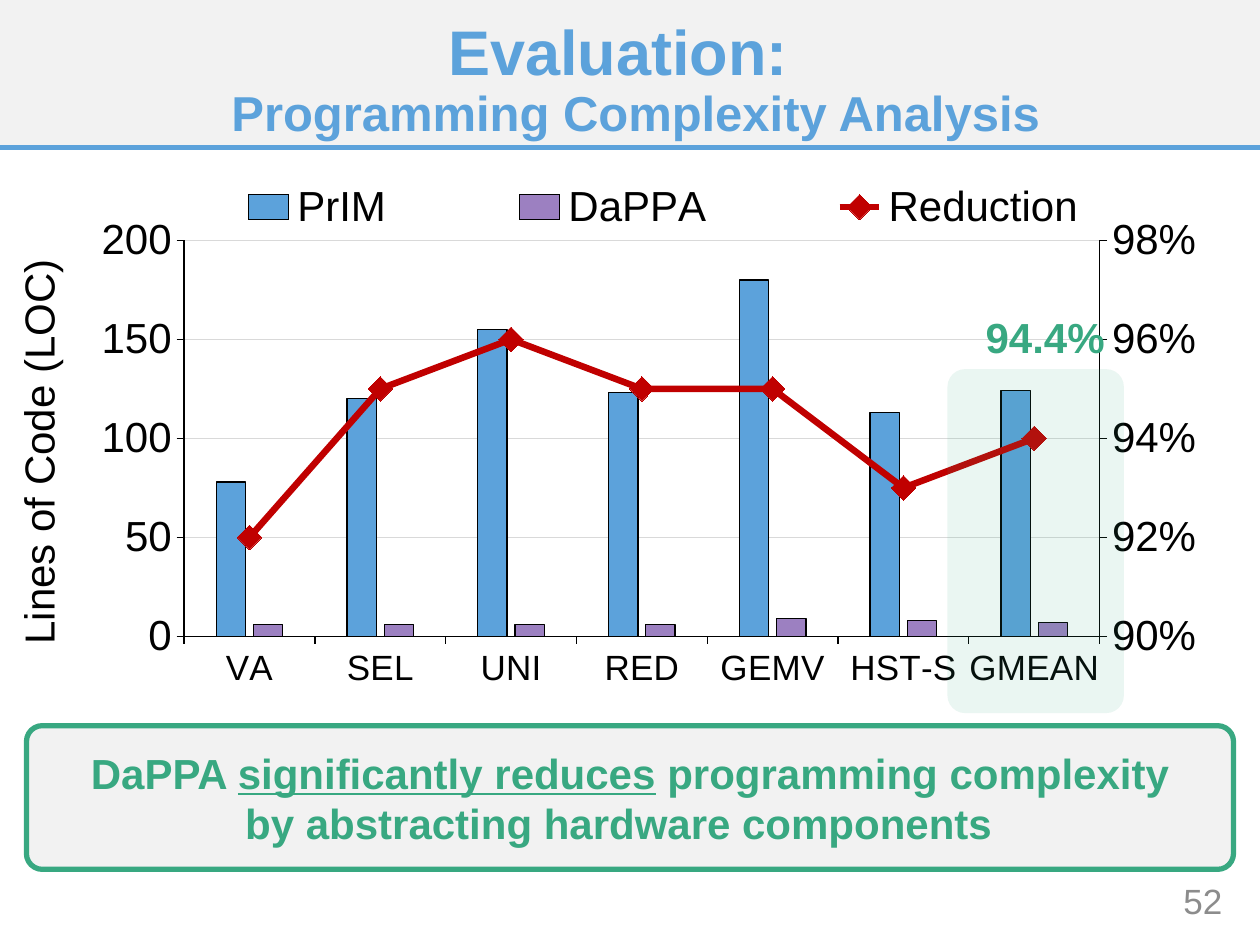
from lxml import etree
from pptx import Presentation
from pptx.chart.data import CategoryChartData
from pptx.dml.color import RGBColor
from pptx.enum.chart import XL_CHART_TYPE, XL_LEGEND_POSITION, XL_MARKER_STYLE, XL_TICK_MARK
from pptx.enum.shapes import MSO_CONNECTOR, MSO_SHAPE
from pptx.enum.text import MSO_ANCHOR, MSO_AUTO_SIZE, PP_ALIGN
from pptx.oxml import parse_xml
from pptx.oxml.ns import nsdecls, qn
from pptx.util import Inches, Pt

CENTER, RIGHT = PP_ALIGN.CENTER, PP_ALIGN.RIGHT
TOP, MIDDLE = MSO_ANCHOR.TOP, MSO_ANCHOR.MIDDLE
OUTSIDE, NO_TICK = XL_TICK_MARK.OUTSIDE, XL_TICK_MARK.NONE
FONT = "Arial"
BLUE, GREEN, PURPLE, RED = "5CA2DB", "38A881", "9C80C1", "C00000"
PALE, GRID, GRAY, BLACK = "F2F2F2", "D9D9D9", "8C8C8C", "000000"

# Content: each line is (runs, size, right indent); each run is (text, underlined)
TITLE = [([("Evaluation:", False)], 36, 0.28),
         ([("Programming Complexity Analysis", False)], 28, 0)]
TAKEAWAY = [([("DaPPA ", False), ("significantly reduces", True),
              (" programming complexity", False)], 24, 0),
            ([("by abstracting hardware components", False)], 24, 0.18)]
CATEGORIES = ["VA", "SEL", "UNI", "RED", "GEMV", "HST-S", "GMEAN"]
BARS = [("PrIM", [78, 120, 155, 123, 180, 113, 124], BLUE),
        ("DaPPA", [6, 6, 6, 6, 9, 8, 7], PURPLE)]
REDUCTION = ("Reduction", [0.92, 0.95, 0.96, 0.95, 0.95, 0.93, 0.94])


def rgb(color):
    return RGBColor.from_string(color)


def box(*lengths):
    return [Inches(v) for v in lengths]


def style_font(font, size, color=BLACK, bold=False):
    font.name, font.size, font.bold = FONT, Pt(size), bold
    font.color.rgb = rgb(color)


def style_line(line, color=BLACK, width=0.75):
    line.color.rgb = rgb(color)
    line.width = Pt(width)


def write(tf, lines, color, bold=True, align=CENTER, spacing=None, anchor=MIDDLE):
    tf.word_wrap = True
    tf.auto_size = MSO_AUTO_SIZE.NONE
    tf.vertical_anchor = anchor
    for i, (runs, size, indent) in enumerate(lines):
        p = tf.paragraphs[0] if i == 0 else tf.add_paragraph()
        p.alignment = align
        if spacing:
            p.line_spacing = spacing
        p._p.get_or_add_pPr().set("marR", str(Inches(indent)))
        for text, underlined in runs:
            r = p.add_run()
            r.text = text
            style_font(r.font, size, color, bold)
            r.font.underline = underlined


def add_panel(shapes, kind, at, fill, radius=None):
    sp = shapes.add_shape(kind, *box(*at))
    sp.shadow.inherit = False
    sp.fill.solid()
    sp.fill.fore_color.rgb = rgb(fill)
    sp.line.fill.background()
    if radius:
        sp.adjustments[0] = radius
    return sp


def layout_xml(x, y, w=None, h=None, inner=False):
    parts = '<c:layoutTarget val="inner"/>' if inner else ""
    parts += '<c:xMode val="edge"/><c:yMode val="edge"/>'
    parts += "".join(f'<c:{k} val="{v}"/>' for k, v in zip("xywh", (x, y, w, h))
                     if v is not None)
    return parse_xml(f'<c:layout {nsdecls("c")}><c:manualLayout>{parts}'
                     '</c:manualLayout></c:layout>')


def set_layout(parent, layout, after=None):
    for old in parent.findall(qn("c:layout")):
        parent.remove(old)
    if after is None:
        parent.insert(0, layout)
    else:
        parent.find(qn(after)).addnext(layout)


def style_axis(axis, size):
    axis.major_tick_mark, axis.minor_tick_mark = OUTSIDE, NO_TICK
    style_font(axis.tick_labels.font, size)
    style_line(axis.format.line)


def move_to_right_axis(chart):
    """Turn the last bar series into a line on a second value axis."""
    area = chart._chartSpace.chart.plotArea
    bars = area.find(qn("c:barChart"))
    ser = bars.findall(qn("c:ser"))[-1]
    for old in ser.findall(qn("c:invertIfNegative")):
        ser.remove(old)
    line = parse_xml(
        f'<c:lineChart {nsdecls("c")}><c:grouping val="standard"/><c:varyColors val="0"/>'
        '<c:marker val="1"/><c:axId val="5001"/><c:axId val="5002"/></c:lineChart>')
    line.insert(2, ser)
    bars.addnext(line)
    cat = parse_xml(
        f'<c:catAx {nsdecls("c")}><c:axId val="5001"/><c:scaling>'
        '<c:orientation val="minMax"/></c:scaling><c:delete val="1"/><c:axPos val="b"/>'
        '<c:crossAx val="5002"/><c:crosses val="autoZero"/></c:catAx>')
    stroke = f'<a:solidFill><a:srgbClr val="{BLACK}"/></a:solidFill>'
    val = parse_xml(
        f'<c:valAx {nsdecls("c", "a")}><c:axId val="5002"/><c:scaling>'
        '<c:orientation val="minMax"/><c:max val="0.98"/><c:min val="0.9"/></c:scaling>'
        '<c:delete val="0"/><c:axPos val="r"/><c:numFmt formatCode="0%" sourceLinked="0"/>'
        '<c:majorTickMark val="out"/><c:minorTickMark val="none"/>'
        f'<c:tickLblPos val="nextTo"/><c:spPr><a:ln w="{Pt(0.75)}">{stroke}</a:ln></c:spPr>'
        f'<c:txPr><a:bodyPr/><a:p><a:pPr><a:defRPr sz="2400" b="0">{stroke}'
        f'<a:latin typeface="{FONT}"/></a:defRPr></a:pPr></a:p></c:txPr>'
        '<c:crossAx val="5001"/><c:crosses val="max"/><c:majorUnit val="0.02"/></c:valAx>')
    last = area.findall(qn("c:valAx"))[-1]
    last.addnext(cat)
    cat.addnext(val)


prs = Presentation()
prs.slide_width, prs.slide_height = box(10, 7.5)
s = prs.slides.add_slide(prs.slide_layouts[5])

# Header band, rule and title
title = s.shapes.title
band = add_panel(s.shapes, MSO_SHAPE.RECTANGLE, (0, 0, 10, 1.17), PALE)
rule = s.shapes.add_connector(MSO_CONNECTOR.STRAIGHT, *box(0, 1.17, 10, 1.17))
style_line(rule.line, BLUE, 3)
etree.SubElement(rule._element.spPr, qn("a:effectLst"))
for part in (band, rule):
    title._element.addprevious(part._element)
title.left, title.top, title.width, title.height = box(0.18, 0.14, 9.73, 1.01)
write(title.text_frame, TITLE, BLUE, spacing=0.9)

# Page number
number = s.shapes.add_textbox(*box(8.72, 6.95, 1.08, 0.4))
write(number.text_frame, [([("52", False)], 20, 0)], GRAY, bold=False, align=RIGHT)

# Takeaway
takeaway = add_panel(s.shapes, MSO_SHAPE.ROUNDED_RECTANGLE, (0.21, 5.76, 9.58, 1.14), PALE, 0.11)
style_line(takeaway.line, GREEN, 3)
write(takeaway.text_frame, TAKEAWAY, GREEN)

# Chart with its left and bottom axes
data = CategoryChartData()
data.categories = CATEGORIES
for name, values, _ in BARS:
    data.add_series(name, values)
data.add_series(*REDUCTION, number_format="0%")
chart = s.shapes.add_chart(XL_CHART_TYPE.COLUMN_CLUSTERED, *box(0, 1.26, 10.22, 4.8), data).chart
chart.has_title = False
style_font(chart.font, 24)
style_axis(chart.category_axis, 20)
loc = chart.value_axis
style_axis(loc, 24)
loc.minimum_scale, loc.maximum_scale, loc.major_unit = 0, 200, 50
style_line(loc.major_gridlines.format.line, GRID)
loc.axis_title.text_frame.text = "Lines of Code (LOC)"
style_font(loc.axis_title.text_frame.paragraphs[0].runs[0].font, 24)
set_layout(loc.axis_title._element, layout_xml(0.003, 0.154), "c:tx")

# Bars, and the line on the right axis
move_to_right_axis(chart)
bar_plot, line_plot = chart.plots
bar_plot.gap_width, bar_plot.overlap = 219, -27
bar_plot.vary_by_categories = False
for series, (_, _, color) in zip(bar_plot.series, BARS):
    series.format.fill.solid()
    series.format.fill.fore_color.rgb = rgb(color)
    style_line(series.format.line)
reduction = line_plot.series[0]
reduction.smooth = False
style_line(reduction.format.line, RED, 3.75)
marker = reduction.marker
marker.style, marker.size = XL_MARKER_STYLE.DIAMOND, 14
marker.format.fill.solid()
marker.format.fill.fore_color.rgb = rgb(RED)
style_line(marker.format.line, RED)

# Legend and plot area
chart.has_legend = True
chart.legend.position = XL_LEGEND_POSITION.BOTTOM
chart.legend.include_in_layout = False
style_font(chart.legend.font, 24)
set_layout(chart.legend._element, layout_xml(0.1, 0.03, 0.83, 0.1), "c:legendPos")
set_layout(chart._chartSpace.chart.plotArea, layout_xml(0.143, 0.135, 0.711, 0.655, True))

# Highlight of the mean
group = s.shapes.add_group_shape()
glow = add_panel(group.shapes, MSO_SHAPE.ROUNDED_RECTANGLE, (7.52, 2.93, 1.4, 2.73), GREEN, 0.1)
tint = glow._element.spPr.find(qn("a:solidFill"))[0]
etree.SubElement(tint, qn("a:alpha")).set("val", "10000")
label = group.shapes.add_textbox(*box(7.64, 2.42, 1.31, 0.5))
write(label.text_frame, [([("94.4%", False)], 24, 0)], GREEN, anchor=TOP)

prs.save("out.pptx")
